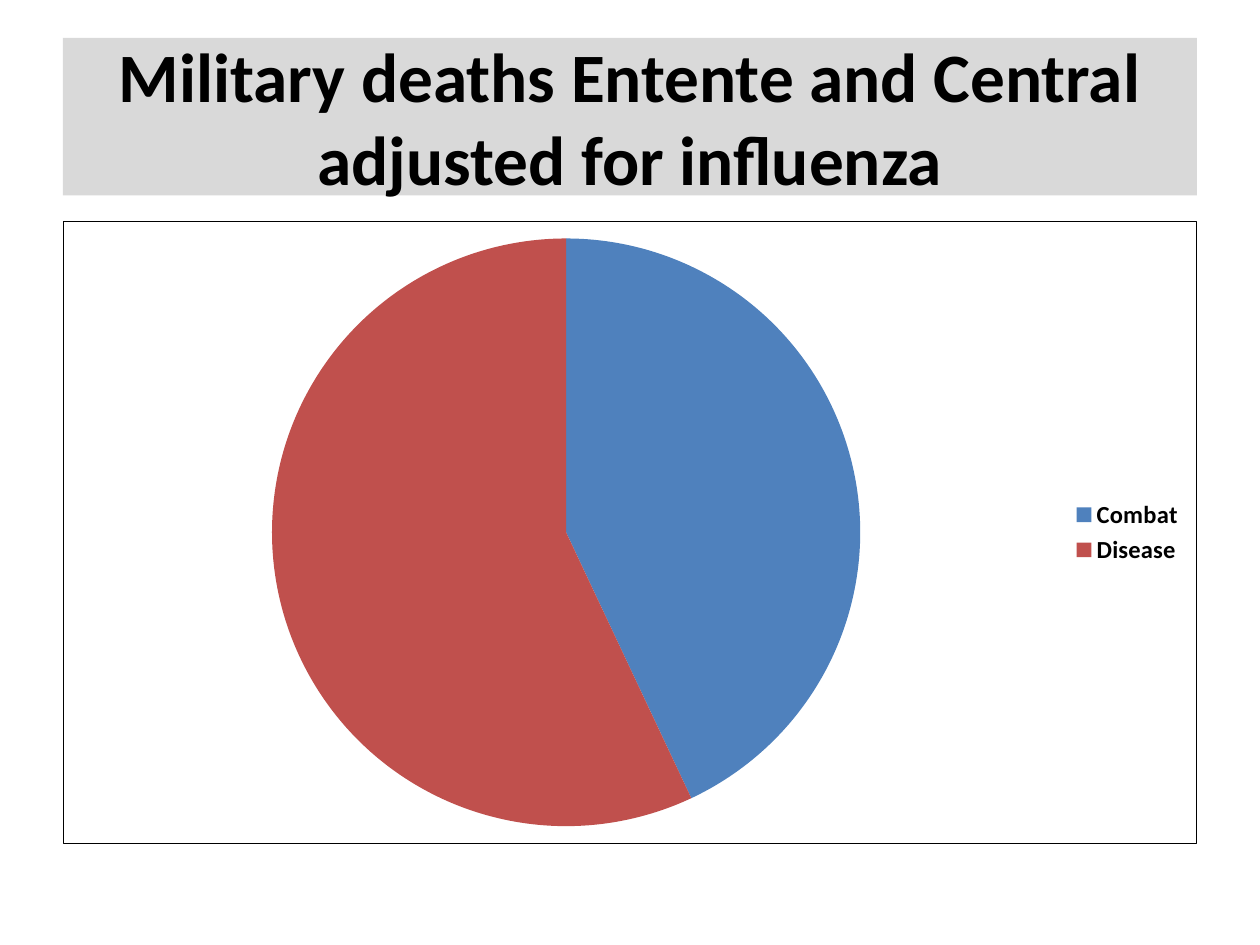
from dataclasses import dataclass

from lxml.etree import SubElement
from pptx import Presentation
from pptx.chart.data import CategoryChartData as Data
from pptx.dml.color import RGBColor
from pptx.enum.chart import XL_CHART_TYPE as Kind, XL_LEGEND_POSITION as Side
from pptx.enum.shapes import MSO_SHAPE as Form
from pptx.enum.text import MSO_ANCHOR as Anchor, PP_ALIGN as Align
from pptx.oxml.ns import qn
from pptx.util import Inches, Pt

WIDE, HIGH = Inches(10), Inches(7.5)
FACE = "Calibri"
INK = "000000"


@dataclass
class Box:
    """An area given as shares of the slide's size."""
    left: float
    top: float
    width: float
    height: float

    def area(self) -> tuple[int, ...]:
        return (round(self.left * WIDE), round(self.top * HIGH),
                round(self.width * WIDE), round(self.height * HIGH))


@dataclass
class Slice:
    name: str
    value: float
    tint: str


SLICES = [Slice("Combat", 43, "4F81BD"), Slice("Disease", 57, "C0504D")]


def color(code: str) -> RGBColor:
    return RGBColor.from_string(code)


def style(font, size: float, bold: bool) -> None:
    font.name, font.size, font.bold = FACE, Pt(size), bold
    font.color.rgb = color(INK)


def add_title(slide, box: Box, text: str) -> None:
    band = slide.shapes.add_shape(Form.RECTANGLE, *box.area())
    band.shadow.inherit = False
    band.fill.solid()
    band.fill.fore_color.rgb = color("D9D9D9")
    band.line.fill.background()
    frame = band.text_frame
    frame.word_wrap = True
    frame.vertical_anchor = Anchor.MIDDLE
    line = frame.paragraphs[0]
    line.text = text
    line.alignment = Align.CENTER
    style(line.font, 39.6, True)


def add_frame(chart, code: str, points: float) -> None:
    """Outline the whole chart area."""
    root = chart.element
    props = SubElement(root, qn("c:spPr"))
    SubElement(props, qn("a:noFill"))
    line = SubElement(props, qn("a:ln"), w=str(Pt(points)))
    fill = SubElement(line, qn("a:solidFill"))
    SubElement(fill, qn("a:srgbClr"), val=code)
    root.find(qn("c:chart")).addnext(props)


def add_pie(slide, box: Box, parts: list[Slice]) -> None:
    data = Data()
    data.categories = [part.name for part in parts]
    data.add_series("Series 1", [part.value for part in parts])
    chart = slide.shapes.add_chart(Kind.PIE, *box.area(), data).chart
    chart.has_title = False
    style(chart.font, 18, False)

    plot = chart.plots[0]
    plot.vary_by_categories = True
    for spot, part in enumerate(parts):
        fill = plot.series[0].points[spot].format.fill
        fill.solid()
        fill.fore_color.rgb = color(part.tint)

    chart.has_legend = True
    chart.legend.position = Side.RIGHT
    chart.legend.include_in_layout = False
    style(chart.legend.font, 14, True)
    add_frame(chart, INK, 0.75)


def main() -> None:
    deck = Presentation()
    deck.slide_width, deck.slide_height = WIDE, HIGH
    slide = deck.slides.add_slide(deck.slide_layouts[6])

    # Heading band
    add_title(slide, Box(0.05, 0.04, 0.9, 1 / 6),
              "Military deaths Entente and Central adjusted for influenza")
    # Share of deaths by cause
    add_pie(slide, Box(0.05, 0.7 / 3, 0.9, 0.66), SLICES)

    deck.save("out.pptx")


if __name__ == "__main__":
    main()
